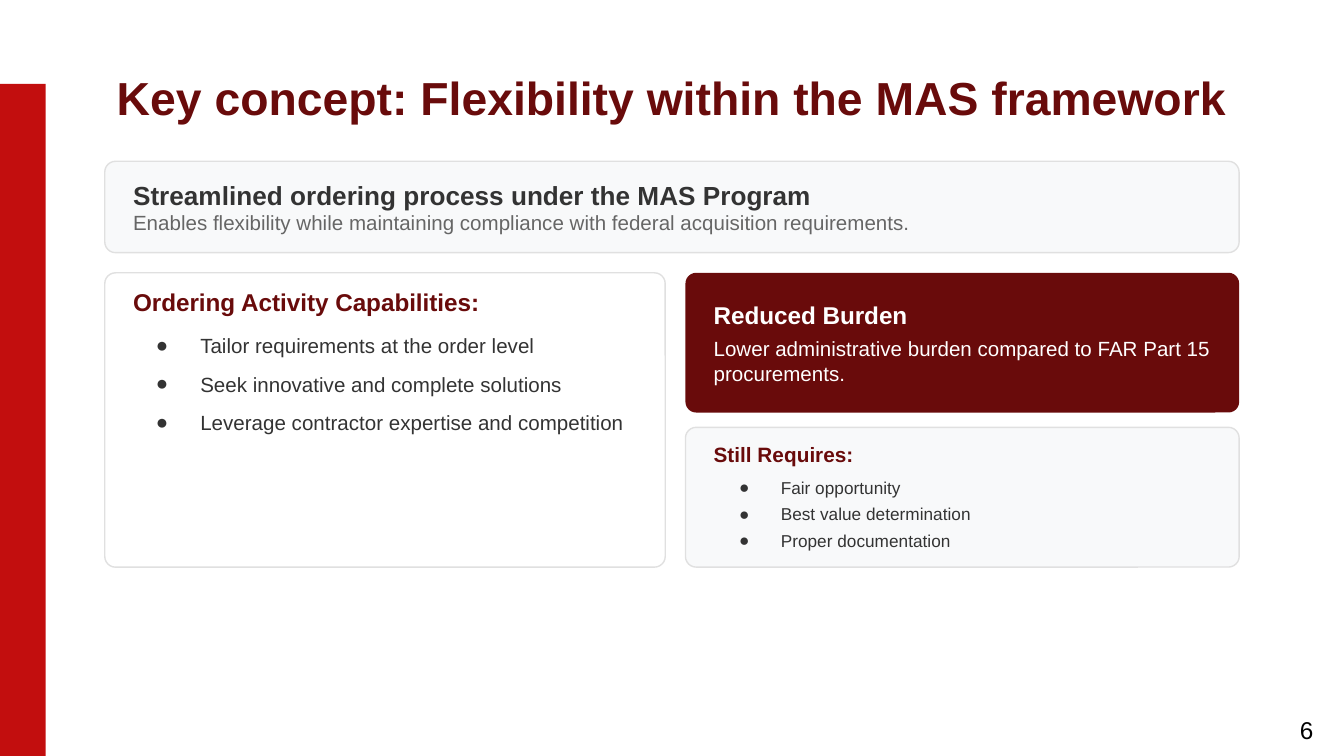
"""Builds the slide on flexibility within the MAS framework."""
from lxml import etree
from pptx import Presentation
from pptx import util as u
from pptx.dml.color import RGBColor
from pptx.enum import shapes, text
from pptx.oxml.ns import qn

WIDTH = 10
HEIGHT = WIDTH * 9 / 16
LEFT, CONTENT_W, PAD = 0.78, 8.44, 0.21
GAP, RADIUS = 0.15, 0.08
BAR_W, BAR_H = 0.34, 5
FONT = "Arial"
MAROON, RED, DARK, GREY = "690B0B", "C20E0E", "333333", "666666"
WHITE, PALE, BORDER = "FFFFFF", "F8F9FA", "E0E0E0"
MIDDLE, TOP = text.MSO_ANCHOR.MIDDLE, text.MSO_ANCHOR.TOP

LEFT_W = 4.17
RIGHT_X = LEFT + LEFT_W + GAP
RIGHT_W = CONTENT_W - LEFT_W - GAP
ROW_Y, ROW_H, STACK_GAP = 2.03, 2.19, 0.11
HALF_H = (ROW_H - STACK_GAP) / 2

TITLE = "Key concept: Flexibility within the MAS framework"
PAGE_NUMBER = "6"


def line(words, size, color, bold=False, before=0, hang=0):
    return dict(words=words, size=size, color=color, bold=bold, before=before, hang=hang)


def bullets(items, size, hang, first_gap, gap):
    return [line(item, size, DARK, before=gap if i else first_gap, hang=hang)
            for i, item in enumerate(items)]


CARDS = [
    dict(box=(LEFT, 1.2, CONTENT_W, 0.68), fill=PALE, border=BORDER, anchor=MIDDLE, pad_y=0, lines=[
        line("Streamlined ordering process under the MAS Program", 14, DARK, True),
        line("Enables flexibility while maintaining compliance with federal "
             "acquisition requirements.", 11, GREY)]),
    dict(box=(LEFT, ROW_Y, LEFT_W, ROW_H), fill=WHITE, border=BORDER, anchor=TOP, pad_y=PAD / 2, lines=[
        line("Ordering Activity Capabilities:", 13, MAROON, True),
        *bullets(["Tailor requirements at the order level",
                  "Seek innovative and complete solutions",
                  "Leverage contractor expertise and competition"], 11, 0.33, 9, 7.5)]),
    dict(box=(RIGHT_X, ROW_Y, RIGHT_W, HALF_H), fill=MAROON, border=None, anchor=MIDDLE, pad_y=0, lines=[
        line("Reduced Burden", 13, WHITE, True),
        line("Lower administrative burden compared to FAR Part 15 procurements.",
             11, WHITE, before=3.8)]),
    dict(box=(RIGHT_X, ROW_Y + HALF_H + STACK_GAP, RIGHT_W, HALF_H), fill=PALE, border=BORDER,
         anchor=TOP, pad_y=PAD / 2, lines=[
             line("Still Requires:", 11.1, MAROON, True),
             *bullets(["Fair opportunity", "Best value determination", "Proper documentation"],
                      9.2, 0.31, 6, 3)]),
]


def rgb(color):
    return RGBColor.from_string(color)


def inches(box):
    return [u.Inches(value) for value in box]


def add_panel(slide, preset, box, fill, border=None):
    panel = slide.shapes.add_shape(preset, *inches(box))
    panel.shadow.inherit = False
    panel.fill.solid()
    panel.fill.fore_color.rgb = rgb(fill)
    if border:
        panel.line.color.rgb = rgb(border)
        panel.line.width = u.Pt(0.75)
    else:
        panel.line.fill.background()
    return panel


def add_bullet(paragraph, hang, color):
    props = paragraph._p.get_or_add_pPr()
    props.set("marL", str(u.Inches(0.5)))
    props.set("indent", str(-u.Inches(hang)))
    bullet_color = etree.SubElement(props, qn("a:buClr"))
    etree.SubElement(bullet_color, qn("a:srgbClr"), val=color)
    etree.SubElement(props, qn("a:buFont"), typeface=FONT)
    etree.SubElement(props, qn("a:buChar"), char="●")


def add_text(slide, box, lines, anchor=TOP, align=text.PP_ALIGN.LEFT, inset=0):
    frame = slide.shapes.add_textbox(*inches(box)).text_frame
    frame.word_wrap = True
    frame.vertical_anchor = anchor
    frame.margin_left = frame.margin_right = u.Inches(inset)
    frame.margin_top = frame.margin_bottom = u.Inches(inset)
    frame.text = "\n".join(item["words"] for item in lines)
    for paragraph, item in zip(frame.paragraphs, lines):
        paragraph.alignment = align
        if item["before"]:
            paragraph.space_before = u.Pt(item["before"])
        if item["hang"]:
            add_bullet(paragraph, item["hang"], item["color"])
        font = paragraph.runs[0].font
        font.name, font.size, font.bold = FONT, u.Pt(item["size"]), item["bold"]
        font.color.rgb = rgb(item["color"])


def add_card(slide, card):
    x, y, w, h = card["box"]
    panel = add_panel(slide, shapes.MSO_SHAPE.ROUNDED_RECTANGLE, card["box"],
                      card["fill"], card["border"])
    panel.adjustments[0] = RADIUS / min(w, h)
    pad_y = card["pad_y"]
    add_text(slide, (x + PAD, y + pad_y, w - 2 * PAD, h - 2 * pad_y), card["lines"], card["anchor"])


def main():
    deck = Presentation()
    deck.slide_width, deck.slide_height = inches((WIDTH, HEIGHT))
    slide = deck.slides.add_slide(deck.slide_layouts[6])
    add_panel(slide, shapes.MSO_SHAPE.RECTANGLE, (0, HEIGHT - BAR_H, BAR_W, BAR_H), RED)
    add_text(slide, (LEFT, 0.31, CONTENT_W, 0.83), [line(TITLE, 24.8, MAROON, True)],
             MIDDLE, text.PP_ALIGN.CENTER)
    for card in CARDS:
        add_card(slide, card)
    add_text(slide, (9.27, 5.22, 0.6, 0.43), [line(PAGE_NUMBER, 13, "000000")],
             align=text.PP_ALIGN.RIGHT, inset=0.1)
    deck.save("out.pptx")


if __name__ == "__main__":
    main()
